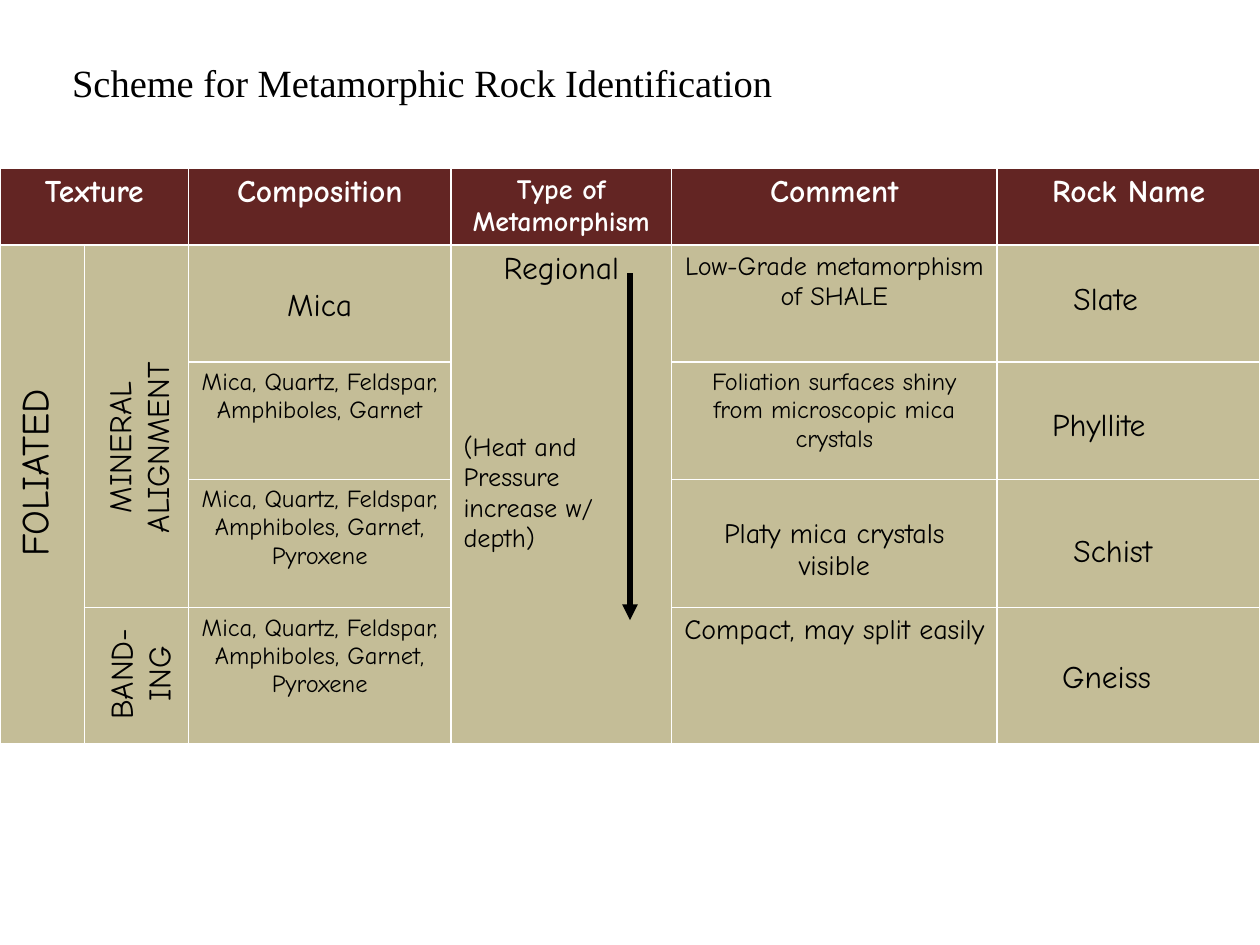
import pptx
import pptx.util
import pptx.dml.color
import pptx.enum.shapes
import pptx.enum.text
import pptx.oxml
import pptx.oxml.ns

Cm, Pt = pptx.util.Cm, pptx.util.Pt
ALIGN = pptx.enum.text.PP_ALIGN
ANCHOR = pptx.enum.text.MSO_ANCHOR

THEME = {
    "header": "632523", "body": "C4BD97", "light": "FFFFFF", "dark": "000000",
    "title_font": "Times New Roman", "font": "Comic Neue",
    "large": 22, "normal": 18, "medium": 16, "note": 15, "small": 14,
}

# Content
TITLE = "Scheme for Metamorphic Rock Identification"
HEADERS = [  # column, text, size
    (0, "Texture", "normal"), (2, "Composition", "normal"),
    (3, "Type of Metamorphism", "medium"),
    (4, "Comment", "normal"), (5, "Rock Name", "normal"),
]
COMPOSITIONS = [  # text, size, top margin
    ("Mica", "normal", 0.86),
    ("Mica, Quartz, Feldspar, Amphiboles, Garnet", "small", 0.13),
    ("Mica, Quartz, Feldspar, Amphiboles, Garnet, Pyroxene", "small", 0.13),
    ("Mica, Quartz, Feldspar, Amphiboles, Garnet, Pyroxene", "small", 0.13),
]
COMMENTS = [
    ("Low-Grade metamorphism of SHALE", "note", 0.13),
    ("Foliation surfaces shiny from microscopic mica crystals", "small", 0.13),
    ("Platy mica crystals visible", "medium", 0.78),
    ("Compact, may split easily", "medium", 0.13),
]
METAMORPHISM = ("Regional", "(Heat and Pressure increase w/ depth)")
TEXTURES = [  # lines, size, left, top, width, height
    (["FOLIATED"], "large", -1.75, 8.94, 4.85, 1.19),
    (["MINERAL", "ALIGNMENT"], "normal", 0.53, 8.13, 4.5, 1.78),
    (["BAND-", "ING"], "normal", 1.5, 12.7, 2.62, 1.78),
]
ROCKS = [("Slate", 21.39), ("Phyllite", 20.96), ("Schist", 21.39), ("Gneiss", 21.16)]

# Table grid
COLUMNS = [1.7, 2.1, 5.29, 4.45, 6.56, 5.3]
ROWS = [1.52, 2.36, 2.36, 2.59, 2.74]
TABLE_TOP = 3.39
MERGES = [(0, 0, 0, 1), (1, 0, 4, 0), (1, 1, 3, 1), (1, 3, 4, 3)]


def color(name):
    return pptx.dml.color.RGBColor.from_string(THEME[name])


def write(para, text, size, ink="dark", font="font", bold=False, align=ALIGN.CENTER):
    para.alignment = align
    span = para.add_run()
    span.text = text
    span.font.color.rgb = color(ink)
    formats = {"size": Pt(THEME[size]), "name": THEME[font], "bold": bold}
    for name, value in formats.items():
        setattr(span.font, name, value)


def add_label(page, lines, size, place, align=ALIGN.CENTER, rotation=0):
    box = page.shapes.add_textbox(*map(Cm, place))
    box.rotation = rotation
    frame = box.text_frame
    frame.word_wrap = True
    for index, line in enumerate(lines):
        para = frame.add_paragraph() if index else frame.paragraphs[0]
        write(para, line, size, align=align)


def add_scheme(page):
    table = page.shapes.add_table(len(ROWS), len(COLUMNS), Cm(0), Cm(TABLE_TOP),
                                  Cm(sum(COLUMNS)), Cm(sum(ROWS))).table
    table.horz_banding = False
    for column, width in zip(table.columns, COLUMNS):
        column.width = Cm(width)
    for index, (row, height) in enumerate(zip(table.rows, ROWS)):
        row.height = Cm(height)
        for cell in row.cells:
            cell.fill.solid()
            cell.fill.fore_color.rgb = color("body" if index else "header")
    for top, left, bottom, right in MERGES:
        table.cell(top, left).merge(table.cell(bottom, right))

    # Header row
    for column, text, size in HEADERS:
        write(table.cell(0, column).text_frame.paragraphs[0], text, size, "light", bold=True)

    # Composition and comment columns
    for column, entries in ((2, COMPOSITIONS), (4, COMMENTS)):
        for row, (text, size, margin) in enumerate(entries, 1):
            cell = table.cell(row, column)
            cell.margin_top = Cm(margin)
            write(cell.text_frame.paragraphs[0], text, size)

    # Type of metamorphism, shared by all rocks
    frame = table.cell(1, 3).text_frame
    kind, reason = METAMORPHISM
    write(frame.paragraphs[0], kind, "normal")
    para = frame.add_paragraph()
    para.space_before = Pt(83)
    write(para, reason, "note", align=ALIGN.LEFT)


def add_depth_arrow(page):
    arrow = page.shapes.add_connector(pptx.enum.shapes.MSO_CONNECTOR.STRAIGHT,
                                      Cm(12.7), Cm(5.51), Cm(12.7), Cm(12.5))
    arrow.line.color.rgb = color("dark")
    arrow.line.width = Pt(3)
    tail = pptx.oxml.parse_xml(
        '<a:tailEnd %s type="triangle"/>' % pptx.oxml.ns.nsdecls("a"))
    arrow.line._get_or_add_ln().append(tail)
    arrow._element.spPr.append(
        pptx.oxml.parse_xml("<a:effectLst %s/>" % pptx.oxml.ns.nsdecls("a")))


def main():
    deck = pptx.Presentation()
    deck.slide_width, deck.slide_height = Cm(25.4), Cm(19.05)
    page = deck.slides.add_slide(deck.slide_layouts[5])

    # Title
    title = page.shapes.title
    place = {"left": 1.12, "top": 1.07, "width": 14.78, "height": 1.19}
    for name, value in place.items():
        setattr(title, name, Cm(value))
    title.text_frame.word_wrap = False
    title.text_frame.vertical_anchor = ANCHOR.TOP
    write(title.text_frame.paragraphs[0], TITLE, "large", font="title_font")

    # Table, texture labels, arrow and rock names
    add_scheme(page)
    for lines, size, *place in TEXTURES:
        add_label(page, lines, size, place, rotation=270)
    add_depth_arrow(page)
    for index, (rock, left) in enumerate(ROCKS):
        add_label(page, [rock], "normal", (left, 5.51 + 2.54 * index, 3.05, 1.27),
                  align=ALIGN.LEFT)

    deck.save("out.pptx")


if __name__ == "__main__":
    main()
